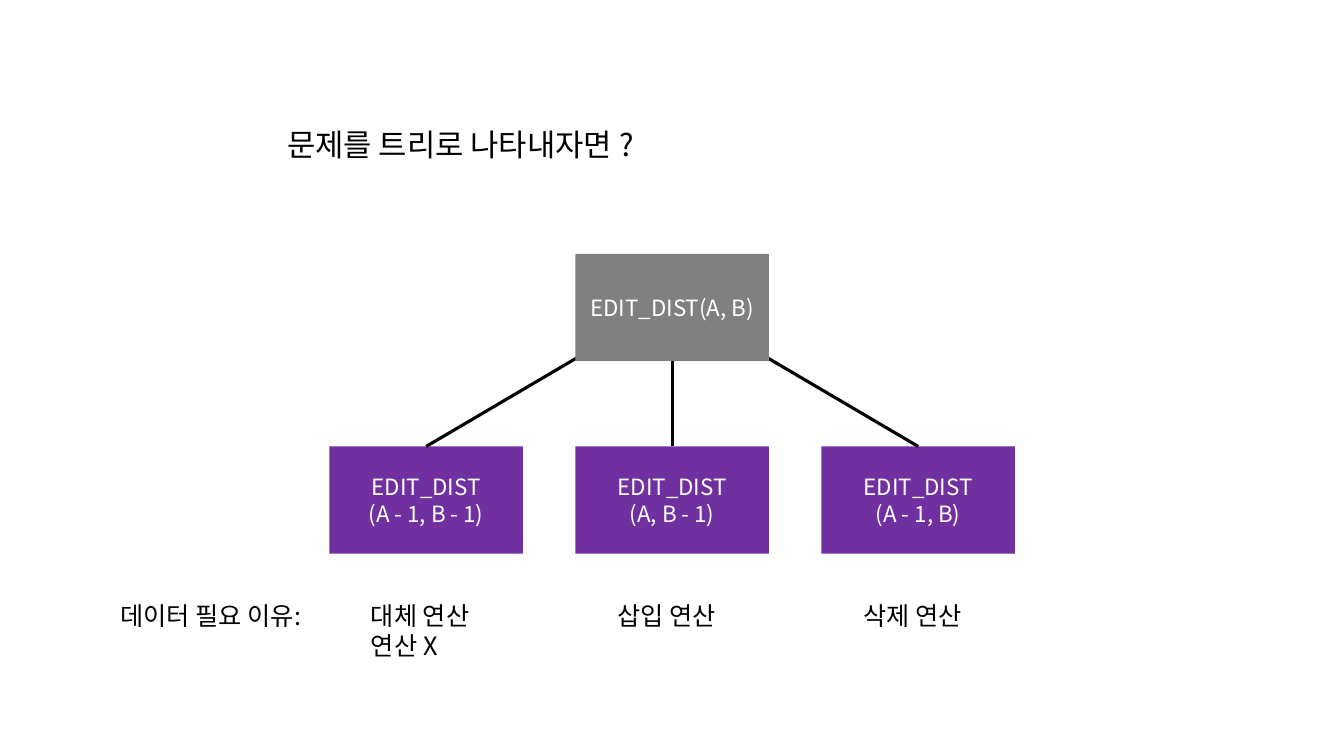
from lxml import etree
from pptx import Presentation
from pptx.dml.color import RGBColor
from pptx.enum.shapes import MSO_CONNECTOR, MSO_SHAPE
from pptx.enum.text import MSO_ANCHOR, PP_ALIGN
from pptx.oxml.ns import qn
from pptx.util import Cm, Pt

RECT = MSO_SHAPE.RECTANGLE
LINE = MSO_CONNECTOR.STRAIGHT
MIDDLE = MSO_ANCHOR.MIDDLE
LEFT, CENTER = PP_ALIGN.LEFT, PP_ALIGN.CENTER
BLACK = RGBColor(0x00, 0x00, 0x00)
WHITE = RGBColor(0xFF, 0xFF, 0xFF)
GRAY = RGBColor(0x80, 0x80, 0x80)
PURPLE = RGBColor(0x70, 0x30, 0xA0)
FONT = "Noto Sans CJK KR"

# Box grid in cm
BOX_W, BOX_H = 4.88, 2.7
FIRST_X, STEP = 8.3, 6.2
ROOT_X, ROOT_Y = FIRST_X + STEP, 6.4
CHILD_Y, NOTE_Y = 11.25, 15

deck = Presentation()
deck.slide_width, deck.slide_height = Cm(33.87), Cm(19.05)
slide = deck.slides.add_slide(deck.slide_layouts[6])
shapes = slide.shapes


def write(shape, text, size, color, align):
    frame = shape.text_frame
    frame.word_wrap = True
    frame.text = text
    for para in frame.paragraphs:
        para.alignment = align
        for run in para.runs:
            run.font.size = Pt(size)
            run.font.name = FONT
            run.font.color.rgb = color
            # Hangul takes the East Asian font
            east = etree.SubElement(run.font._element, qn("a:ea"))
            east.set("typeface", FONT)


def add_box(x, y, text, color):
    box = shapes.add_shape(RECT, Cm(x), Cm(y), Cm(BOX_W), Cm(BOX_H))
    box.shadow.inherit = False
    box.fill.solid()
    box.fill.fore_color.rgb = color
    box.line.fill.background()
    box.text_frame.vertical_anchor = MIDDLE
    write(box, text, 16, WHITE, CENTER)
    return box


# Child boxes, each with a line up to the root
edges = []
for i, args in enumerate(["(A - 1, B - 1)", "(A, B - 1)", "(A - 1, B)"]):
    x = FIRST_X + i * STEP
    child = add_box(x, CHILD_Y, "EDIT_DIST\n" + args, PURPLE)
    end_x = ROOT_X + BOX_W / 2 + (i - 1) * 2.05
    edge = shapes.add_connector(
        LINE, Cm(x + BOX_W / 2), Cm(CHILD_Y), Cm(end_x), Cm(8.81))
    edge.begin_connect(child, 0)
    edge.line.color.rgb = BLACK
    edge.line.width = Pt(2.25)
    etree.SubElement(edge._element.spPr, qn("a:effectLst"))
    edges.append(edge)

# Root box covers the ends of the outer lines
root = add_box(ROOT_X, ROOT_Y, "EDIT_DIST(A, B)", GRAY)
edges[1].end_connect(root, 2)

# Title, row label and reasons
texts = [
    (6.99, 3.05, 9.96, 1.19, "문제를 트리로 나타내자면 ?", 22),
    (2.79, NOTE_Y, 5.51, 1.02, "데이터 필요 이유:", 18),
]
for i, reason in enumerate(["대체 연산\n연산 X", "삽입 연산", "삭제 연산"]):
    high = 1.8 if "\n" in reason else 1.02
    texts.append((FIRST_X + 0.8 + i * STEP, NOTE_Y, 3.28, high, reason, 18))
for x, y, wide, high, text, size in texts:
    label = shapes.add_textbox(Cm(x), Cm(y), Cm(wide), Cm(high))
    write(label, text, size, BLACK, LEFT)

deck.save("out.pptx")
